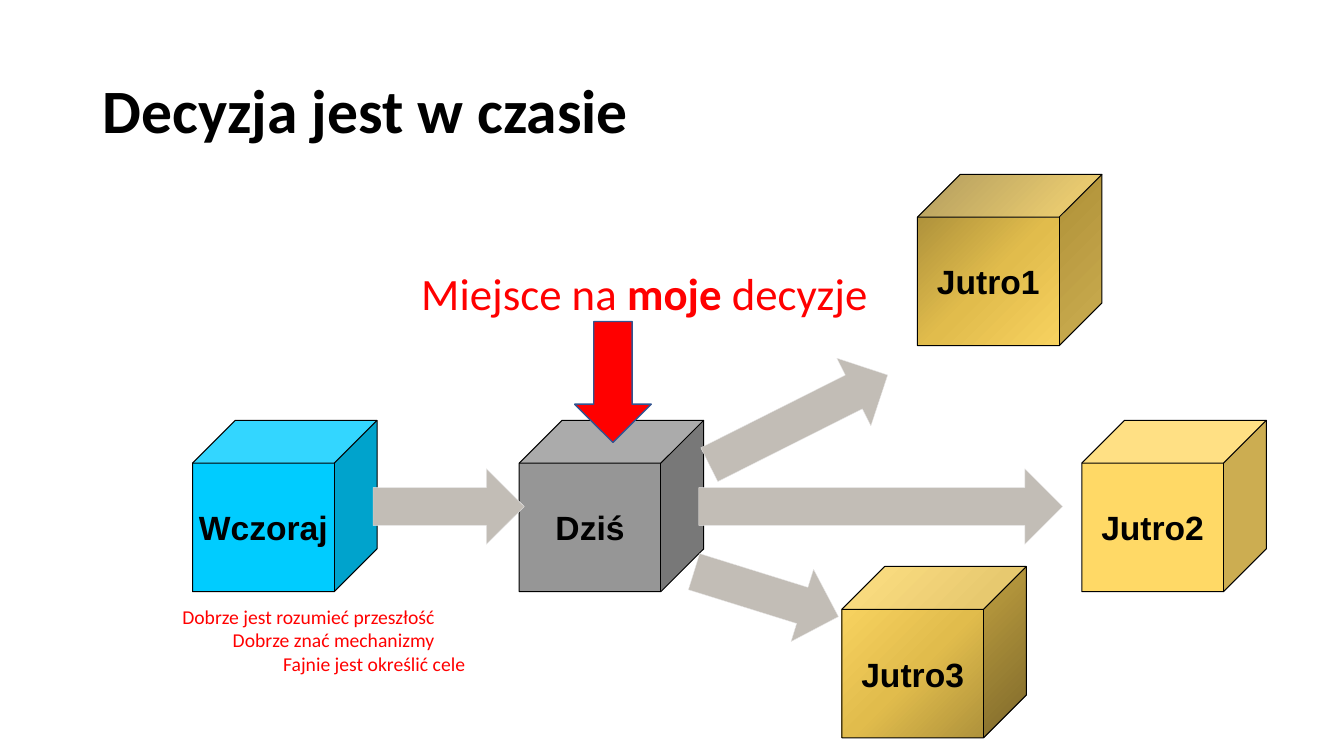
from copy import deepcopy

from pptx import Presentation
from pptx import util as u
from pptx.dml.color import RGBColor
from pptx.enum import shapes, text
from pptx.oxml.ns import qn

COLORS = {
    "black": "000000",
    "red": "FF0000",
    "past": "00CCFF",
    "present": "969696",
    "future": "FFD966",
    "future_mid": "E1BC4C",
    "future_dark": "9E8436",
    "arrow": "C2BDB6",
    "arrow_edge": "E7E6E6",
    "decision_edge": "325491",
}
GRADIENT = [(0, "future_dark"), (0.5, "future_mid"), (1, "future")]
CUBE_SIZE = (1.83, 1.7)
TIMELINE_TOP = 4.17
ARROW_HEIGHT = 0.75


def rgb(name):
    return RGBColor.from_string(COLORS[name])


def inches(*lengths):
    return [u.Inches(length) for length in lengths]


def format_run(run, size, color, font="Calibri", bold=False):
    run.font.name = font
    run.font.size = u.Pt(size)
    run.font.bold = bold
    run.font.color.rgb = rgb(color)


def add_outlined(slide, preset, box, fill, edge, weight):
    shape = slide.shapes.add_shape(preset, *inches(*box))
    shape.shadow.inherit = False
    shape.fill.solid()
    shape.fill.fore_color.rgb = rgb(fill)
    shape.line.color.rgb = rgb(edge)
    shape.line.width = u.Pt(weight)
    return shape


def apply_gradient(shape, angle):
    shape.fill.gradient()
    first_stop = shape.element.spPr.find(".//" + qn("a:gs"))
    first_stop.addnext(deepcopy(first_stop))
    for stop, (position, color) in zip(shape.fill.gradient_stops, GRADIENT):
        stop.position = position
        stop.color.rgb = rgb(color)
    shape.fill.gradient_angle = 360 - angle


def add_day(slide, label, left, top, fill, angle=None):
    cube = add_outlined(slide, shapes.MSO_SHAPE.CUBE,
                        (left, top, *CUBE_SIZE), fill, "black", 0.75)
    cube.adjustments[0] = 0.25
    if angle is not None:
        apply_gradient(cube, angle)
    frame = cube.text_frame
    frame.text = label
    frame.word_wrap = False
    frame.vertical_anchor = text.MSO_ANCHOR.MIDDLE
    frame.paragraphs[0].alignment = text.PP_ALIGN.CENTER
    format_run(frame.paragraphs[0].runs[0], 24, "black", "Arial", True)


def add_time_arrow(slide, left, top, width, rotation=0):
    arrow = add_outlined(slide, shapes.MSO_SHAPE.RIGHT_ARROW,
                         (left, top, width, ARROW_HEIGHT),
                         "arrow", "arrow_edge", 0.25)
    arrow.rotation = rotation


def add_note(slide, box, lines, size):
    frame = slide.shapes.add_textbox(*inches(*box)).text_frame
    frame.word_wrap = True
    for index, parts in enumerate(lines):
        paragraph = frame.add_paragraph() if index else frame.paragraphs[0]
        for words, bold in parts:
            run = paragraph.add_run()
            run.text = words
            format_run(run, size, "red", bold=bold)


def set_title(slide, words):
    title = slide.shapes.title
    title.left, title.top, title.width, title.height = inches(0.92, 0.4, 11.5, 1.45)
    frame = title.text_frame
    frame.text = words
    frame.vertical_anchor = text.MSO_ANCHOR.MIDDLE
    frame.paragraphs[0].alignment = text.PP_ALIGN.LEFT
    frame.paragraphs[0].line_spacing = 0.9
    format_run(frame.paragraphs[0].runs[0], 44, "black", bold=True)


def main():
    deck = Presentation()
    deck.slide_width, deck.slide_height = inches(13.33, 7.5)
    slide = deck.slides.add_slide(deck.slide_layouts[5])
    set_title(slide, "Decyzja jest w czasie")

    add_day(slide, "Wczoraj", 1.91, TIMELINE_TOP, "past")
    add_day(slide, "Dziś", 5.15, TIMELINE_TOP, "present")
    add_day(slide, "Jutro2", 10.73, TIMELINE_TOP, "future")
    add_time_arrow(slide, 3.7, 4.65, 1.5)
    add_time_arrow(slide, 6.93, 4.65, 3.61)
    add_outlined(slide, shapes.MSO_SHAPE.DOWN_ARROW,
                 (5.7, 3.19, 0.76, 1.2), "red", "decision_edge", 1)

    add_note(slide, (4.08, 2.59, 4.96, 0.64),
             [[("Miejsce na ", False), ("moje", True), (" decyzje", False)]], 32)
    advice = ["Dobrze jest rozumieć przeszłość", "Dobrze znać mechanizmy",
              "Fajnie jest określić cele"]
    add_note(slide, (1.71, 5.95, 7.62, 0.81),
             [[("\t" * step + words, False)] for step, words in enumerate(advice)], 14)

    add_day(slide, "Jutro1", 9.1, 1.73, "future", 45)
    add_day(slide, "Jutro3", 8.35, 5.62, "future", 225)
    add_time_arrow(slide, 6.85, 5.52, 1.5, 17.3)
    add_time_arrow(slide, 6.93, 3.79, 1.98, 333.3)

    deck.save("out.pptx")


if __name__ == "__main__":
    main()
